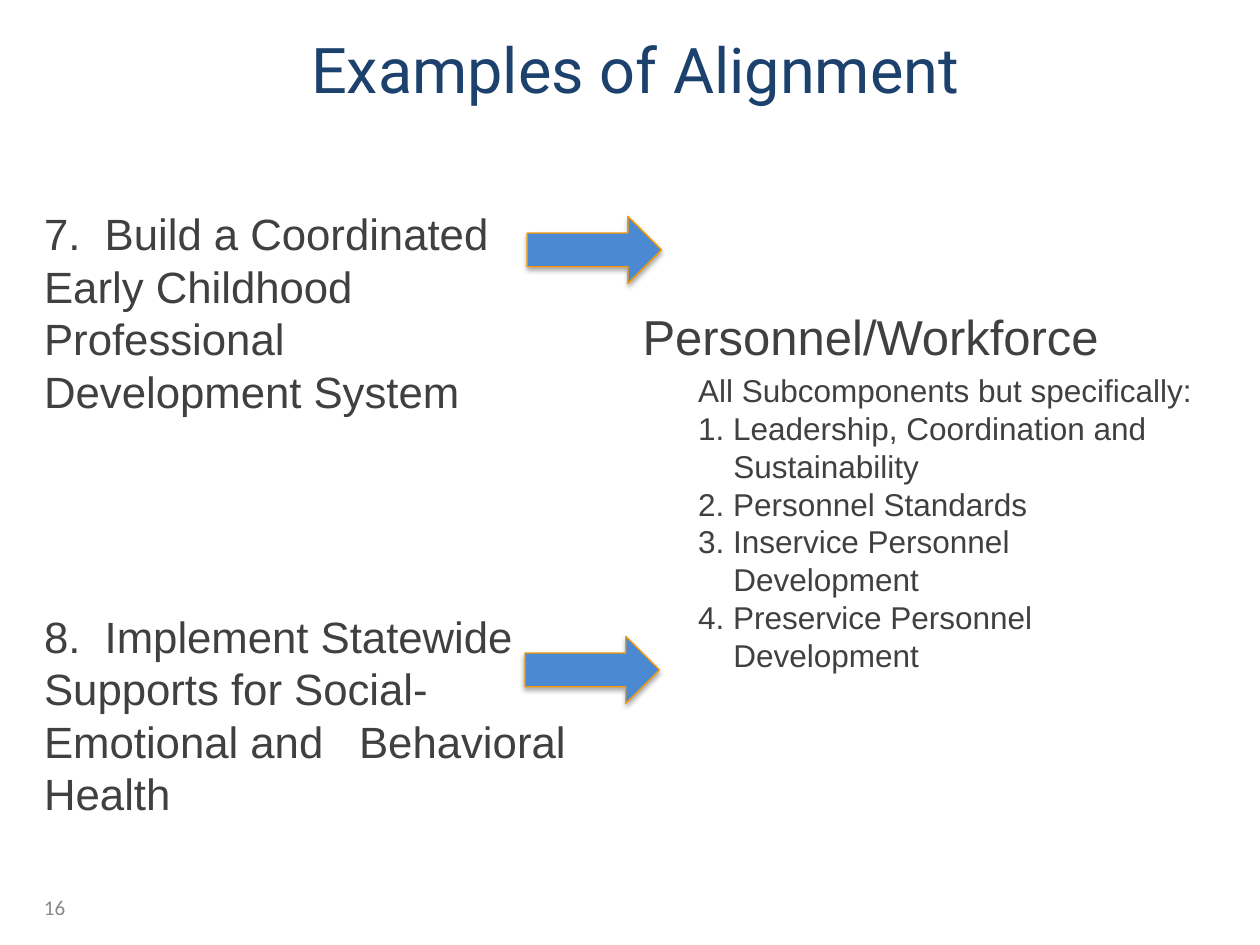
"""Builds the slide that aligns two recommendations with the workforce component."""
from dataclasses import dataclass

from lxml import etree
from pptx import Presentation
from pptx import util as u
from pptx.dml.color import RGBColor
from pptx.enum import shapes, text
from pptx.oxml import parse_xml
from pptx.oxml.ns import nsdecls, qn


@dataclass(frozen=True)
class Theme:
    """Colours, fonts and type sizes."""
    title: str = "1B416C"
    body: str = "404040"
    footer: str = "898989"
    arrow: str = "4B8AD2"
    edge: str = "F89800"
    title_font: str = "Roboto"
    body_font: str = "Arial"
    footer_font: str = "Calibri"
    title_size: int = 36
    heading_size: int = 28
    example_size: int = 25
    detail_size: int = 18
    footer_size: int = 12


@dataclass(frozen=True)
class Area:
    """A place on the slide in grid columns and rows."""
    col: float
    row: float
    cols: float
    rows: float


THEME = Theme()
GRID_COLS, GRID_ROWS = 120, 90
SLIDE_WIDTH, SLIDE_HEIGHT = u.Inches(10), u.Inches(7.5)
LINE_PITCH = 1.2

TITLE = Area(3, 2, 115, 9)
EXAMPLES = Area(3, 13, 56, 70)
COMPONENT = Area(60, 9, 58, 77)
PAGE_NUMBER = Area(3, 84, 21, 4.8)
ARROWS = [Area(50.2, 20.6, 12.8, 6.4), Area(50, 60.6, 12.8, 6.4)]

EXAMPLE_TEXTS = [
    "7.  Build a Coordinated\vEarly Childhood\vProfessional\vDevelopment System",
    "8.  Implement Statewide\vSupports for Social-\vEmotional and\tBehavioral\vHealth",
]
SUBCOMPONENTS = [
    "1. Leadership, Coordination and\vSustainability",
    "2. Personnel Standards",
    "3. Inservice Personnel\vDevelopment",
    "4. Preservice Personnel\vDevelopment",
]


def box(area: Area) -> tuple[int, int, int, int]:
    """Turn a grid area into left, top, width and height."""
    col, row = SLIDE_WIDTH / GRID_COLS, SLIDE_HEIGHT / GRID_ROWS
    return (round(area.col * col), round(area.row * row),
            round(area.cols * col), round(area.rows * row))


def place(part, area: Area, top_inset: float = 0.05):
    """Move a text part to its area and return its emptied frame."""
    part.left, part.top, part.width, part.height = box(area)
    frame = part.text_frame
    frame.clear()
    frame.word_wrap = True
    frame.auto_size = text.MSO_AUTO_SIZE.NONE
    frame.margin_top = u.Inches(top_inset)
    return frame


def write(frame, words: str, *, size: float, color: str = THEME.body,
          font: str = THEME.body_font, align=text.PP_ALIGN.LEFT, before: float = 0,
          left: float = 0, hang: float = 0, level: int = 0, tab: float = 0,
          pitch: float = 0) -> None:
    """Write one formatted paragraph without a bullet."""
    first = frame.paragraphs[0]
    paragraph = frame.add_paragraph() if first.runs else first
    paragraph.alignment, paragraph.level = align, level
    paragraph.space_before = u.Pt(before)
    if pitch:
        paragraph.line_spacing = u.Pt(round(size * pitch, 2))
    paragraph.text = words
    for run in paragraph.runs:
        run.font.size, run.font.name = u.Pt(size), font
        run.font.color.rgb = RGBColor.from_string(color)
    properties = paragraph._p.get_or_add_pPr()
    properties.set("marL", str(u.Inches(left + hang)))
    properties.set("indent", str(u.Inches(-hang)))
    etree.SubElement(properties, qn("a:buNone"))
    if tab:
        stops = etree.SubElement(properties, qn("a:tabLst"))
        etree.SubElement(stops, qn("a:tab"), pos=str(u.Inches(tab)), algn="l")


def draw_arrow(slide, area: Area) -> None:
    """Draw an arrow with a soft shadow below it."""
    arrow = slide.shapes.add_shape(shapes.MSO_SHAPE.RIGHT_ARROW, *box(area))
    arrow.fill.solid()
    arrow.fill.fore_color.rgb = RGBColor.from_string(THEME.arrow)
    arrow.line.color.rgb = RGBColor.from_string(THEME.edge)
    arrow.line.width = u.Pt(0.75)
    arrow._element.spPr.append(parse_xml(
        f'<a:effectLst {nsdecls("a")}><a:outerShdw blurRad="{u.Pt(3.1)}" '
        f'dist="{u.Pt(1.8)}" dir="5400000" rotWithShape="0"><a:srgbClr val="000000">'
        '<a:alpha val="35000"/></a:srgbClr></a:outerShdw></a:effectLst>'))


def main() -> None:
    """Build and save the slide."""
    deck = Presentation()
    deck.slide_width, deck.slide_height = SLIDE_WIDTH, SLIDE_HEIGHT
    slide = deck.slides.add_slide(deck.slide_layouts.get_by_name("Two Content"))
    title, examples, component = slide.placeholders

    write(place(title, TITLE), "Examples of Alignment", size=THEME.title_size,
          color=THEME.title, font=THEME.title_font, align=text.PP_ALIGN.CENTER)

    example_frame = place(examples, EXAMPLES, top_inset=0.56)
    for words, before in zip(EXAMPLE_TEXTS, (0, 110)):
        write(example_frame, words, size=THEME.example_size, before=before,
              tab=2.5, pitch=LINE_PITCH)

    component_frame = place(component, COMPONENT, top_inset=1.68)
    write(component_frame, "Personnel/Workforce", size=THEME.heading_size,
          pitch=LINE_PITCH)
    write(component_frame, "All Subcomponents but specifically:", left=0.44,
          size=THEME.detail_size, before=3.6, level=1, pitch=LINE_PITCH)
    for words in SUBCOMPONENTS:
        write(component_frame, words, size=THEME.detail_size, left=0.44, hang=0.28,
              level=1, pitch=LINE_PITCH)

    for area in ARROWS:
        draw_arrow(slide, area)

    number_frame = place(slide.shapes.add_textbox(*box(PAGE_NUMBER)), PAGE_NUMBER)
    number_frame.vertical_anchor = text.MSO_ANCHOR.MIDDLE
    write(number_frame, "16", size=THEME.footer_size, color=THEME.footer,
          font=THEME.footer_font)

    deck.save("out.pptx")


if __name__ == "__main__":
    main()
